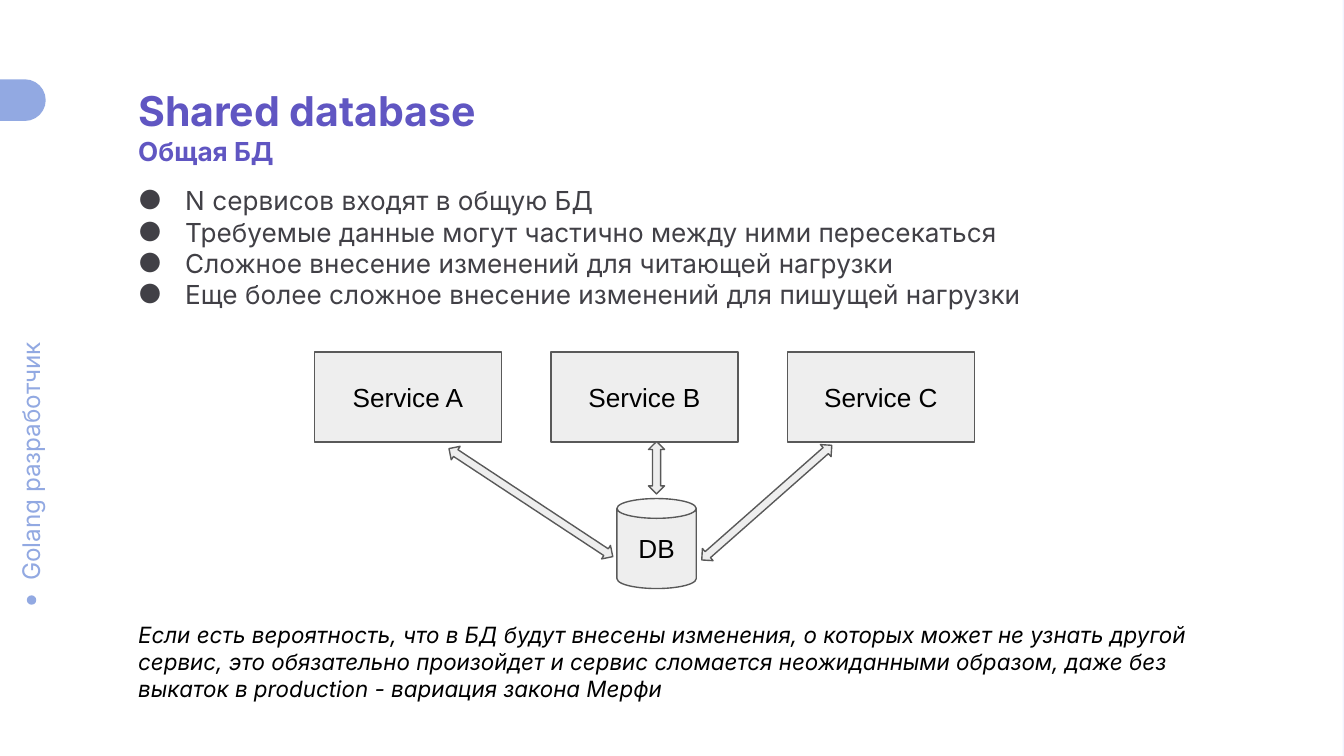
from typing import NamedTuple

from lxml.etree import SubElement
from pptx import Presentation
from pptx.dml.color import RGBColor
from pptx.enum.shapes import MSO_SHAPE as Shape
from pptx.enum.text import MSO_ANCHOR as Anchor, PP_ALIGN as Align
from pptx.oxml.ns import qn
from pptx.util import Inches, Pt

PAPER = RGBColor(0xF1, 0xF4, 0xFF)
WHITE = RGBColor(0xFF, 0xFF, 0xFF)
BLACK = RGBColor(0, 0, 0)
SKY = RGBColor(0x92, 0xA9, 0xE2)
VIOLET = RGBColor(0x60, 0x56, 0xC2)
INK = RGBColor(0x41, 0x40, 0x46)
PALE = RGBColor(0xEE, 0xEE, 0xEE)
EDGE = RGBColor(0x59, 0x59, 0x59)

COLUMNS, ROWS = 100, 56.25
CELL = Inches(10) / COLUMNS


class Box(NamedTuple):
    left: float
    top: float
    width: float
    height: float

    def inner(self, left, top, width, height):
        return Box(self.left + left, self.top + top, width, height)

    def lengths(self):
        return [round(cells * CELL) for cells in self]


def write(frame, text, size=14, color=BLACK, font="Inter", bold=False,
          italic=False, align=Align.LEFT, anchor=Anchor.TOP, inset=1,
          bullet=None):
    frame.word_wrap = True
    frame.vertical_anchor = anchor
    frame.margin_left = frame.margin_right = round(CELL)
    frame.margin_top = frame.margin_bottom = round(inset * CELL)
    lines = text.split("\n")
    sizes = size if isinstance(size, tuple) else (size,) * len(lines)
    for index, (line, points) in enumerate(zip(lines, sizes)):
        paragraph = frame.add_paragraph() if index else frame.paragraphs[0]
        paragraph.alignment = align
        if bullet:
            add_bullet(paragraph, bullet, color)
        run = paragraph.add_run()
        run.text = line
        run.font.name, run.font.size = font, Pt(points)
        run.font.bold, run.font.italic = bold, italic
        run.font.color.rgb = color


def add_bullet(paragraph, mark, color):
    properties = paragraph._p.get_or_add_pPr()
    properties.set("marL", str(round(5 * CELL)))
    properties.set("indent", str(round(-3.5 * CELL)))
    tint = SubElement(properties, qn("a:buClr"))
    SubElement(tint, qn("a:srgbClr"), val=str(color))
    SubElement(properties, qn("a:buFont"), typeface="Inter")
    SubElement(properties, qn("a:buChar"), char=mark)


def add_text(slide, box, text, rotation=0, **style):
    label = slide.shapes.add_textbox(*box.lengths())
    label.rotation = rotation
    write(label.text_frame, text, **style)


def add_figure(slide, kind, box, fill, edge=None, rotation=0, adjust=()):
    figure = slide.shapes.add_shape(kind, *box.lengths())
    figure.shadow.inherit = False
    figure.rotation = rotation
    figure.fill.solid()
    figure.fill.fore_color.rgb = fill
    if edge is None:
        figure.line.fill.background()
    else:
        figure.line.color.rgb = edge
        figure.line.width = Pt(0.75)
    for index, value in enumerate(adjust):
        figure.adjustments[index] = value
    return figure


def draw_sidebar(slide, box):
    add_text(slide, box.inner(-7.7, 26.2, 20, 4.2), "Golang разработчик",
             rotation=270, size=13, color=SKY)
    add_figure(slide, Shape.OVAL, box.inner(2, 38.4, 0.7, 0.7), SKY)
    add_figure(slide, Shape.ROUNDED_RECTANGLE, box.inner(-3.8, 0, 7.2, 3.1),
               SKY, adjust=[0.5])


def draw_heading(slide, box):
    add_text(slide, box, "Shared database\nОбщая БД", size=(22, 14),
             color=VIOLET, bold=True, inset=0.5)


def draw_points(slide, box):
    points = [
        "N сервисов входят в общую БД",
        "Требуемые данные могут частично между ними пересекаться",
        "Сложное внесение изменений для читающей нагрузки",
        "Еще более сложное внесение изменений для пишущей нагрузки",
    ]
    add_text(slide, box, "\n".join(points), color=INK, inset=0.5, bullet="●")


def draw_diagram(slide, box):
    service_step = 17.6
    nodes = [(Shape.RECTANGLE, f"Service {letter}",
              (index * service_step, 0, 13.9, 6.7), [])
             for index, letter in enumerate("ABC")]
    nodes.append((Shape.CAN, "DB", (22.5, 10.9, 5.9, 6.7), [0.25]))
    for kind, name, place, adjust in nodes:
        node = add_figure(slide, kind, box.inner(*place), PALE, EDGE,
                          adjust=adjust)
        write(node.text_frame, name, font="Arial", align=Align.CENTER,
              anchor=Anchor.MIDDLE)
    arrows = [(8.8, 10.6, 14.6, 33.4), (27.2, 10.6, 12.9, 138.6),
              (23.5, 8, 3.9, 90)]
    for left, top, length, rotation in arrows:
        add_figure(slide, Shape.LEFT_RIGHT_ARROW,
                   box.inner(left, top, length, 1.2), PALE, EDGE,
                   rotation=rotation, adjust=[0.5, 0.5])


def draw_note(slide, box):
    note = ("Если есть вероятность, что в БД будут внесены изменения, "
            "о которых может не узнать другой сервис, это обязательно "
            "произойдет и сервис сломается неожиданными образом, даже без "
            "выкаток в production - вариация закона Мерфи")
    add_text(slide, box, note, size=12, italic=True)


def main():
    deck = Presentation()
    deck.slide_width = round(COLUMNS * CELL)
    deck.slide_height = round(ROWS * CELL)
    slide = deck.slides.add_slide(deck.slide_layouts[6])
    slide.background.fill.solid()
    slide.background.fill.fore_color.rgb = PAPER
    add_figure(slide, Shape.RECTANGLE, Box(-0.1, 0, COLUMNS, ROWS), WHITE)
    draw_sidebar(slide, Box(0, 5.9, 4, 40))
    draw_heading(slide, Box(9.3, 5.9, 61.2, 4.7))
    draw_note(slide, Box(9.3, 45.2, 84.4, 8.1))
    draw_points(slide, Box(7.8, 13.25, 72.1, 10.5))
    draw_diagram(slide, Box(23.4, 26.2, 49.1, 17.6))
    deck.save("out.pptx")


if __name__ == "__main__":
    main()
